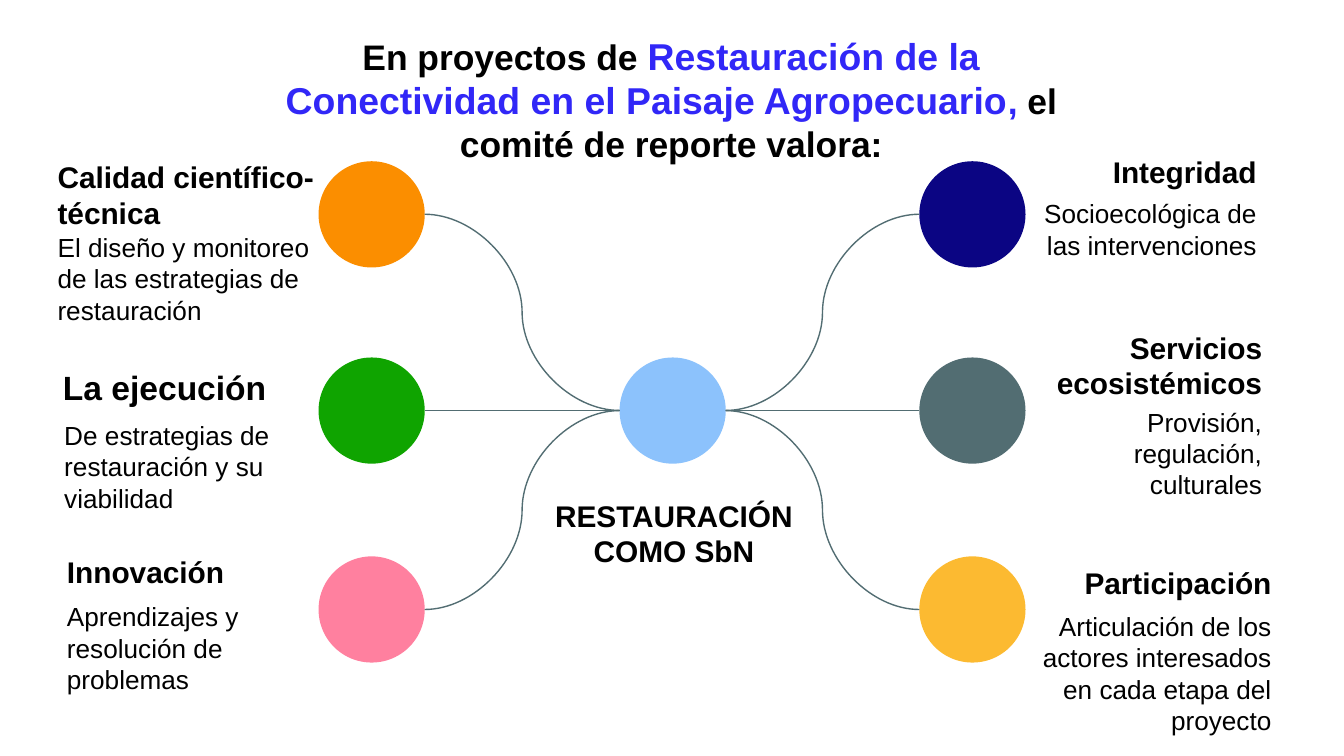
from lxml import etree
from pptx import Presentation
from pptx.dml.color import RGBColor
from pptx.enum.shapes import MSO_CONNECTOR, MSO_SHAPE
from pptx.enum.text import MSO_ANCHOR, MSO_AUTO_SIZE, PP_ALIGN
from pptx.oxml.ns import qn
from pptx.util import Inches, Pt

LEFT, CENTER, RIGHT = PP_ALIGN.LEFT, PP_ALIGN.CENTER, PP_ALIGN.RIGHT
TOP, MIDDLE = MSO_ANCHOR.TOP, MSO_ANCHOR.MIDDLE
NO_FIT = MSO_AUTO_SIZE.NONE
OVAL, CURVE = MSO_SHAPE.OVAL, MSO_CONNECTOR.CURVE
BLACK, BLUE, SLATE = "000000", "3127F7", "526D72"


def color(hex_value):
    return RGBColor.from_string(hex_value)


def write(sp, runs, align=LEFT, anchor=TOP):
    """Fill a shape with one paragraph of (text, size, bold, colour) runs."""
    tf = sp.text_frame
    tf.word_wrap = True
    tf.auto_size = NO_FIT
    tf.vertical_anchor = anchor
    tf.margin_left = tf.margin_right = tf.margin_top = tf.margin_bottom = Inches(0.1)
    p = tf.paragraphs[0]
    p.alignment = align
    for text, size, bold, hex_value in runs:
        r = p.add_run()
        r.text = text
        r.font.name = "Arial"
        r.font.size = Pt(size)
        r.font.bold = bold
        r.font.color.rgb = color(hex_value)


# A 16:9 slide
prs = Presentation()
prs.slide_width = Inches(10)
prs.slide_height = Inches(10) * 9 // 16
s = prs.slides.add_slide(prs.slide_layouts[5])

# Title
title = s.shapes.title
title.left, title.top = Inches(1.74), Inches(0.53)
title.width, title.height = Inches(6.51), Inches(0.41)
write(title, [
    ("En proyectos de ", 19, True, BLACK),
    ("Restauración de la Conectividad en el Paisaje Agropecuario", 20, True, BLUE),
    (", ", 19, True, BLUE),
    ("el comité de reporte valora:", 19, True, BLACK),
], align=CENTER, anchor=MIDDLE)

# Circles: a hub with three nodes on each side
D = 0.79
LEFT_X, HUB_X, RIGHT_X = 2.37, 4.61, 6.84
ROWS = [1.2, 2.66, 4.14]
HUB_Y = ROWS[1]
circles = [(HUB_X, HUB_Y, "8CC2FC")]
circles += zip([LEFT_X] * 3, ROWS, ["FB8E00", "0FA400", "FF809F"])
circles += zip([RIGHT_X] * 3, ROWS, ["0B0583", SLATE, "FCBA31"])
for x, y, fill in circles:
    sp = s.shapes.add_shape(OVAL, Inches(x), Inches(y), Inches(D), Inches(D))
    sp.shadow.inherit = False
    sp.fill.solid()
    sp.fill.fore_color.rgb = color(fill)
    sp.line.fill.background()

# Curves from the hub to each node
for start_x, end_x in [(HUB_X, LEFT_X + D), (HUB_X + D, RIGHT_X)]:
    for y in ROWS:
        line = s.shapes.add_connector(CURVE, Inches(start_x), Inches(HUB_Y + D / 2),
                                      Inches(end_x), Inches(y + D / 2))
        line.line.color.rgb = color(SLATE)
        line.line.width = Pt(0.75)
        etree.SubElement(line._element.spPr, qn("a:effectLst"))

# Labels: left, top, width, height, text, size, bold, alignment
labels = [
    (0.33, 1.08, 2.29, 0.4, "Calidad científico-técnica", 16, True, LEFT),
    (0.33, 1.62, 2.15, 0.74, "El diseño y monitoreo de las estrategias de restauración",
     14, False, LEFT),
    (0.37, 2.63, 1.87, 0.4, "La ejecución", 18, True, LEFT),
    (0.38, 3.02, 1.93, 0.74, "De estrategias de restauración y su viabilidad", 14, False, LEFT),
    (0.4, 4.02, 1.87, 0.39, "Innovación", 16, True, LEFT),
    (0.4, 4.37, 1.93, 0.72, "Aprendizajes y resolución de problemas", 14, False, LEFT),
    (7.58, 1.04, 1.87, 0.4, "Integridad", 16, True, RIGHT),
    (7.52, 1.37, 1.93, 0.74, "Socioecológica de las intervenciones", 14, False, RIGHT),
    (7.62, 2.35, 1.87, 0.39, "Servicios ecosistémicos", 16, True, RIGHT),
    (7.56, 2.92, 1.93, 0.72, "Provisión, regulación, culturales", 14, False, RIGHT),
    (7.69, 4.1, 1.87, 0.4, "Participación", 16, True, RIGHT),
    (7.63, 4.44, 1.93, 0.74,
     "Articulación de los actores interesados en cada etapa del proyecto", 14, False, RIGHT),
    (4.01, 3.6, 2.01, 0.74, "RESTAURACIÓN COMO SbN", 16, True, CENTER),
]
for x, y, w, h, text, size, bold, align in labels:
    box = s.shapes.add_textbox(Inches(x), Inches(y), Inches(w), Inches(h))
    write(box, [(text, size, bold, BLACK)], align=align)

prs.save("out.pptx")
